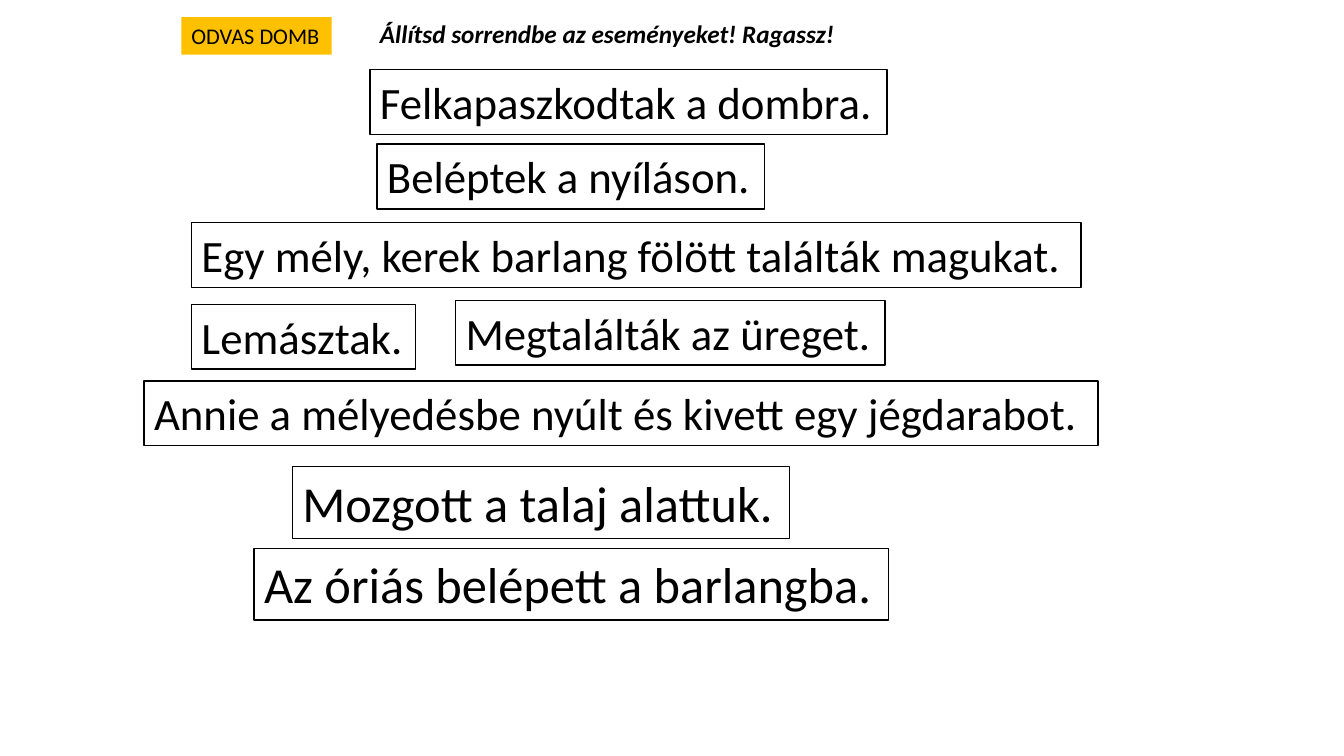
from pptx import Presentation
from pptx import util as u
from pptx.dml.color import RGBColor
from pptx.enum import shapes, text

BLACK = RGBColor(0x00, 0x00, 0x00)
AMBER = RGBColor(0xFF, 0xC0, 0x00)
FONT = "Calibri"

# Content: wording, then column, row and width in grid cells, then text size
TOPIC = ("ODVAS DOMB", 18, 1.7, 14.9, 16)
TASK = ("Állítsd sorrendbe az eseményeket! Ragassz!", 36.7, 1.3, 47.4, 18)
EVENTS = [
    ("Felkapaszkodtak a dombra.", 36.7, 6.9, 51.3, 32),
    ("Beléptek a nyíláson.", 37.4, 14.3, 38.4, 32),
    ("Egy mély, kerek barlang fölött találták magukat.", 19, 22.1, 88.2, 32),
    ("Lemásztak.", 19, 30.2, 22.2, 32),
    ("Megtalálták az üreget.", 45.2, 29.8, 42.6, 32),
    ("Annie a mélyedésbe nyúlt és kivett egy jégdarabot.", 14.3, 37.8, 94.6, 32),
    ("Mozgott a talaj alattuk.", 29, 46.3, 49.3, 36),
    ("Az óriás belépett a barlangba.", 25.2, 54.4, 62.9, 36),
]

# Grid of tenth-inch cells; a strip is one line of text plus its insets
CELL = u.Inches(0.1)
LINE_SPACING = 1.22

presentation = Presentation()
presentation.slide_width = u.Inches(13.33)
presentation.slide_height = u.Inches(7.5)
slide = presentation.slides.add_slide(presentation.slide_layouts[6])


def place(strip):
    """Return left, top, width and height of a one-line strip."""
    _, column, row, width, size = strip
    height = CELL + u.Pt(size * LINE_SPACING)
    return [int(length) for length in (column * CELL, row * CELL, width * CELL, height)]


def write(shape, strip, emphasis=False):
    frame = shape.text_frame
    frame.text = strip[0]
    frame.word_wrap = False
    frame.auto_size = text.MSO_AUTO_SIZE.SHAPE_TO_FIT_TEXT
    frame.vertical_anchor = text.MSO_ANCHOR.TOP
    paragraph = frame.paragraphs[0]
    paragraph.alignment = text.PP_ALIGN.LEFT
    font = paragraph.font
    font.name = FONT
    font.size = u.Pt(strip[-1])
    font.color.rgb = BLACK
    font.bold = font.italic = emphasis


def add_strip(strip, fill=None):
    """Add a filled label, or an outlined strip when no fill is given."""
    shape = slide.shapes.add_shape(shapes.MSO_SHAPE.RECTANGLE, *place(strip))
    shape.shadow.inherit = False
    if fill is None:
        shape.fill.background()
        shape.line.color.rgb = BLACK
        shape.line.width = u.Pt(1)
    else:
        shape.fill.solid()
        shape.fill.fore_color.rgb = fill
        shape.line.fill.background()
    write(shape, strip)


# Heading: topic label and task
add_strip(TOPIC, AMBER)
write(slide.shapes.add_textbox(*place(TASK)), TASK, emphasis=True)

# Events to put in order
for event in EVENTS:
    add_strip(event)

presentation.save("out.pptx")
